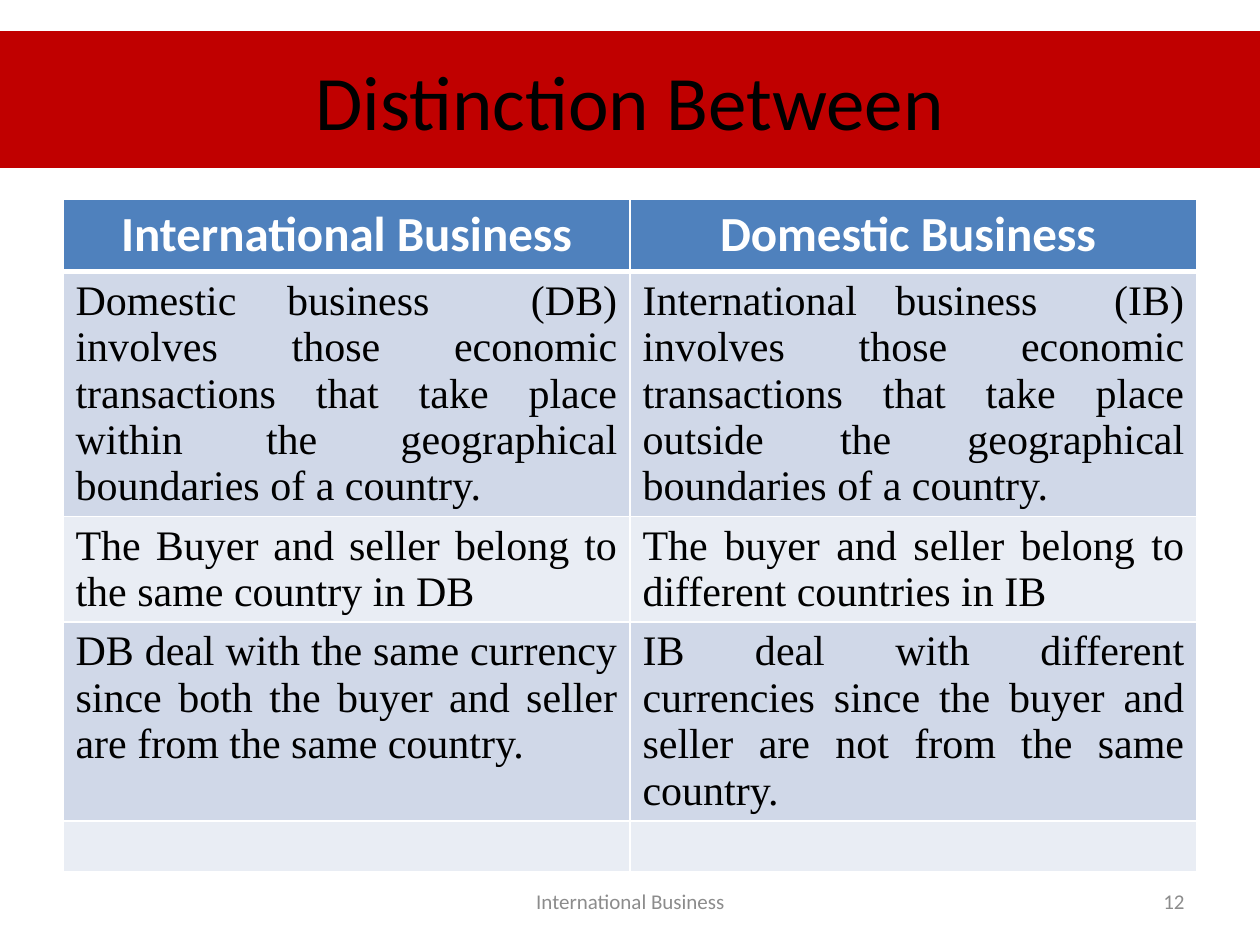
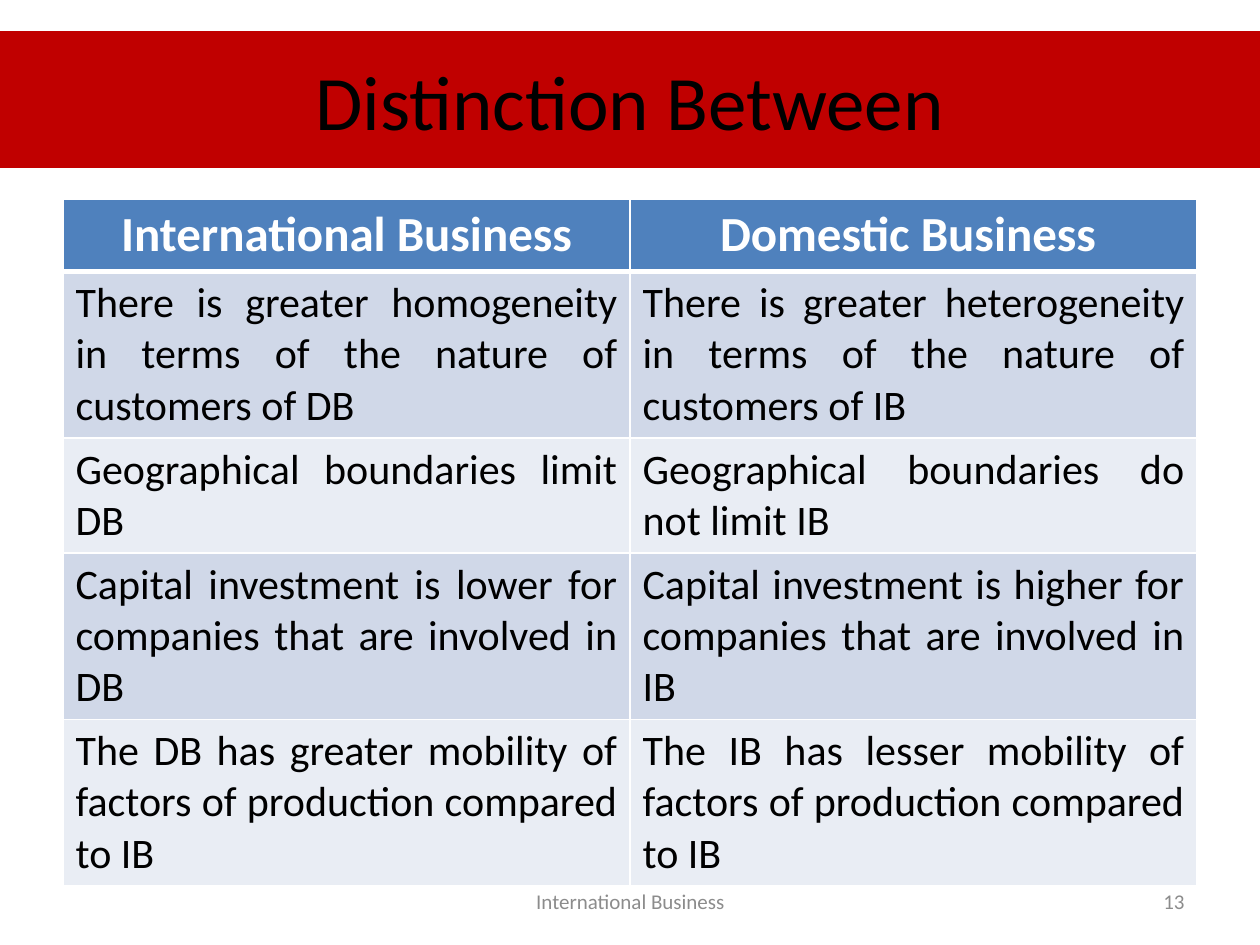
from lxml.etree import SubElement
from pptx import Presentation
from pptx.dml.color import RGBColor
from pptx.enum.text import MSO_ANCHOR, MSO_AUTO_SIZE, PP_ALIGN
from pptx.oxml.ns import qn
from pptx.util import Emu, Pt

# Content
TITLE = "Distinction Between"
FOOTER = "International Business"
HEADER = ("International Business", "Domestic Business ")
SLIDES = [
    {
        "number": 12,
        "font": "Times New Roman",
        "row_heights": [72, 245, 105, 199, 50],
        "rows": [
            ("Domestic business  (DB) involves those economic transactions that "
             "take place within the geographical boundaries of a country.",
             "International business  (IB) involves those economic transactions that "
             "take place outside the geographical boundaries of a country."),
            ("The Buyer and seller belong to the same country in DB",
             "The buyer and seller belong to different countries in IB"),
            ("DB deal with the same currency since both the buyer and seller "
             "are from the same country.",
             "IB deal with different currencies since the buyer and seller "
             "are not from the same country."),
            ("", ""),
        ],
    },
    {
        "number": 13,
        "font": "Calibri",
        "row_heights": [72, 166, 115, 166, 166],
        "rows": [
            ("There is greater homogeneity in terms of the nature of customers of DB",
             "There is greater heterogeneity in terms of the nature of customers of IB"),
            ("Geographical boundaries limit DB",
             "Geographical boundaries do not limit IB"),
            ("Capital investment is lower for companies that are involved in DB",
             "Capital investment is higher for companies that are involved in IB"),
            ("The DB has greater mobility of factors of production compared to IB",
             "The IB has lesser mobility of factors of production compared to IB"),
        ],
    },
]

# Shared look
RED = RGBColor(0xC0, 0x00, 0x00)
BLACK = RGBColor(0x00, 0x00, 0x00)
WHITE = RGBColor(0xFF, 0xFF, 0xFF)
GREY = RGBColor(0x8C, 0x8C, 0x8C)
BLUE = RGBColor(0x4F, 0x81, 0xBD)
BANDS = (RGBColor(0xD0, 0xD8, 0xE8), RGBColor(0xE9, 0xED, 0xF4))

# Places in px: left, top, width, height
PX_PER_INCH = 126
SLIDE_SIZE = (1260, 945)
TITLE_BOX = (0, 31, 1260, 137)
TABLE_LEFT, TABLE_TOP, COLUMN_WIDTH = 63, 199, 567
NUMBER_BOX = (903, 876, 294, 50)
FOOTER_BOX = (431, 876, 399, 50)


def px(n):
    return Emu(round(n * 914400 / PX_PER_INCH))


def write(tf, text, size=12, color=BLACK, font="Calibri", bold=False,
          align=PP_ALIGN.CENTER):
    p = tf.paragraphs[0]
    p.alignment = align
    r = p.add_run()
    r.text = text
    r.font.size = Pt(size)
    r.font.name = font
    r.font.bold = bold
    r.font.color.rgb = color


def add_title(s):
    sp = s.shapes.title
    sp.left, sp.top, sp.width, sp.height = map(px, TITLE_BOX)
    sp.fill.solid()
    sp.fill.fore_color.rgb = RED
    tf = sp.text_frame
    tf.auto_size = MSO_AUTO_SIZE.NONE
    tf.vertical_anchor = MSO_ANCHOR.MIDDLE
    write(tf, TITLE, size=44)


def add_note(s, box, text, align):
    tf = s.shapes.add_textbox(*map(px, box)).text_frame
    tf.word_wrap = True
    tf.vertical_anchor = MSO_ANCHOR.MIDDLE
    write(tf, text, color=GREY, align=align)


def set_borders(cell, top, bottom):
    tcPr = cell._tc.get_or_add_tcPr()
    for side, width in (("L", 1), ("R", 1), ("T", top), ("B", bottom)):
        ln = SubElement(tcPr, qn(f"a:ln{side}"), w=str(Pt(width)))
        fill = SubElement(ln, qn("a:solidFill"))
        SubElement(fill, qn("a:srgbClr"), val=str(WHITE))


def add_comparison(s, rows, row_heights, font):
    rows = [HEADER] + rows
    table = s.shapes.add_table(
        len(rows), len(HEADER), px(TABLE_LEFT), px(TABLE_TOP),
        px(COLUMN_WIDTH * len(HEADER)), px(sum(row_heights))).table
    for column in table.columns:
        column.width = px(COLUMN_WIDTH)
    for i, (row, height) in enumerate(zip(rows, row_heights)):
        table.rows[i].height = px(height)
        for j, text in enumerate(row):
            cell = table.cell(i, j)
            # Borders precede the fill in the cell properties
            set_borders(cell, top=3 if i == 1 else 1, bottom=3 if i == 0 else 1)
            cell.fill.solid()
            cell.fill.fore_color.rgb = BANDS[(i - 1) % 2] if i else BLUE
            if i == 0:
                write(cell.text_frame, text, size=28, color=WHITE, bold=True)
            elif text:
                write(cell.text_frame, text, size=24, font=font,
                      align=PP_ALIGN.JUSTIFY)


def main():
    prs = Presentation()
    prs.slide_width, prs.slide_height = map(px, SLIDE_SIZE)
    for content in SLIDES:
        s = prs.slides.add_slide(prs.slide_layouts[5])
        add_title(s)
        add_comparison(s, content["rows"], content["row_heights"], content["font"])
        add_note(s, NUMBER_BOX, str(content["number"]), PP_ALIGN.RIGHT)
        add_note(s, FOOTER_BOX, FOOTER, PP_ALIGN.CENTER)
    prs.save("out.pptx")


if __name__ == "__main__":
    main()
